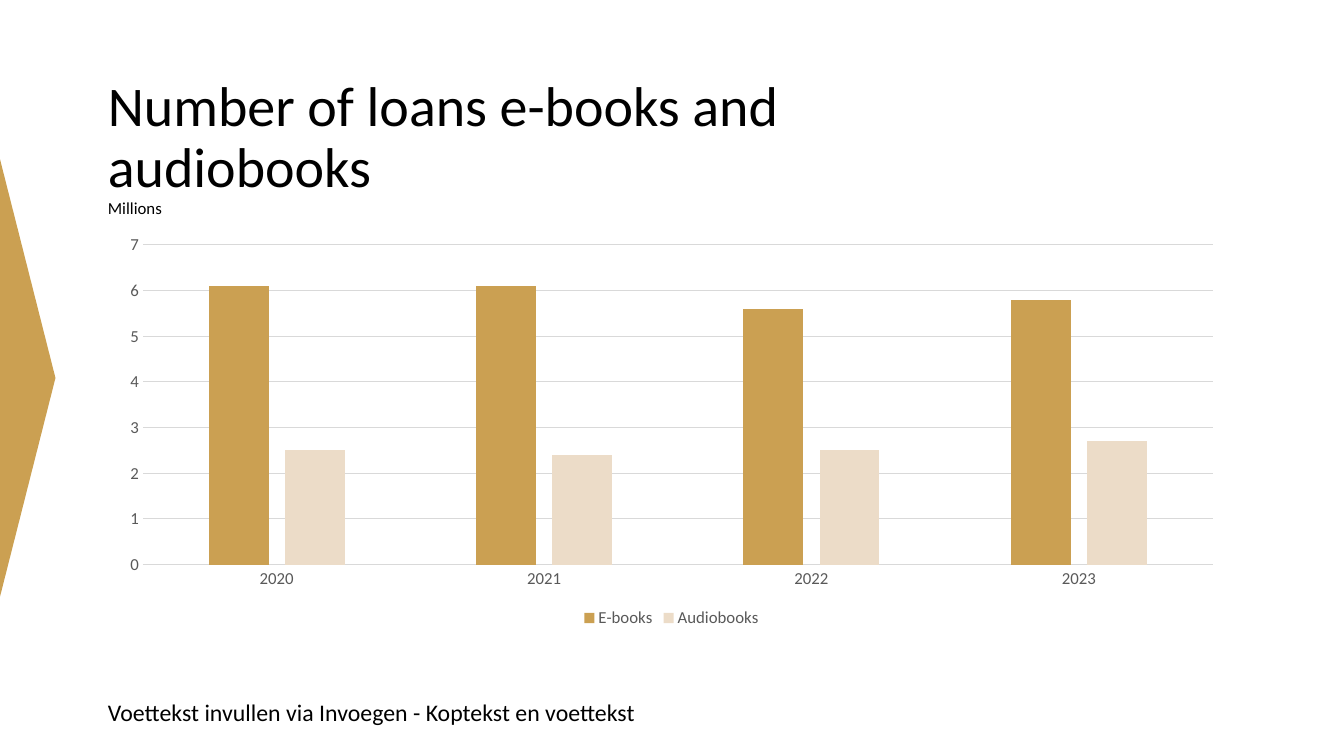
from pptx import Presentation
from pptx import util as u
from pptx.chart.data import CategoryChartData
from pptx.dml.color import RGBColor
from pptx.enum import chart as ch, text

COLOURS = {"gold": "CBA052", "sand": "ECDCC8", "black": "000000",
           "label": "595959", "grid": "D9D9D9"}
LEFT = 1.07
LOANS = {"E-books": ("gold", (6.1, 6.1, 5.6, 5.8)),
         "Audiobooks": ("sand", (2.5, 2.4, 2.5, 2.7))}


class SlideBuilder:
    face = "Calibri"

    def __init__(self, page):
        self.page = page

    def colour(self, name):
        return RGBColor.from_string(COLOURS[name])

    def style_font(self, font, size, colour="black"):
        font.name, font.size, font.bold = self.face, u.Pt(size), False
        font.color.rgb = self.colour(colour)

    def style_line(self, line, colour="grid"):
        line.color.rgb = self.colour(colour)
        line.width = u.Pt(0.75)

    def span(self, para, words, size):
        span = para.add_run()
        span.text = words
        self.style_font(span.font, size)

    def prepare_frame(self, box, anchor):
        frame = box.text_frame
        frame.margin_left = frame.margin_right = 0
        frame.margin_top = frame.margin_bottom = 0
        frame.word_wrap = True
        frame.auto_size = text.MSO_AUTO_SIZE.NONE
        frame.vertical_anchor = anchor
        para = frame.paragraphs[0]
        para.alignment = text.PP_ALIGN.LEFT
        return para

    def title(self, heading, unit, left, top, width, height):
        box = self.page.shapes.title
        box.left, box.top = u.Inches(left), u.Inches(top)
        box.width, box.height = u.Inches(width), u.Inches(height)
        para = self.prepare_frame(box, text.MSO_ANCHOR.TOP)
        para.line_spacing = 0.9
        para.space_before = u.Pt(0)
        self.span(para, heading, 40)
        para.add_line_break()
        self.span(para, unit, 12)

    def footer(self, words, left, top, width, height):
        box = self.page.shapes.add_textbox(*map(u.Inches, (left, top, width, height)))
        self.span(self.prepare_frame(box, text.MSO_ANCHOR.MIDDLE), words, 17)

    def polygon(self, points, colour):
        start, *rest = [(u.Inches(x), u.Inches(y)) for x, y in points]
        outline = self.page.shapes.build_freeform(*start)
        outline.add_line_segments(rest, close=True)
        shape = outline.convert_to_shape()
        shape.shadow.inherit = False
        shape.fill.solid()
        shape.fill.fore_color.rgb = self.colour(colour)
        shape.line.fill.background()

    def column_chart(self, categories, series, left, top, width, height):
        """Draw clustered columns; series maps a name to (colour, values)."""
        data = CategoryChartData()
        data.categories = categories
        for name, (_, values) in series.items():
            data.add_series(name, values)
        chart = self.page.shapes.add_chart(
            ch.XL_CHART_TYPE.COLUMN_CLUSTERED,
            *map(u.Inches, (left, top, width, height)), data).chart
        self.style_font(chart.font, 10)
        chart.has_title = False
        chart.has_legend = True
        chart.legend.position = ch.XL_LEGEND_POSITION.BOTTOM
        chart.legend.include_in_layout = False
        self.style_font(chart.legend.font, 12, "label")

        for axis in (chart.category_axis, chart.value_axis):
            axis.major_tick_mark = axis.minor_tick_mark = ch.XL_TICK_MARK.NONE
            self.style_font(axis.tick_labels.font, 12, "label")
        self.style_line(chart.category_axis.format.line)
        chart.value_axis.format.line.fill.background()
        chart.value_axis.minimum_scale = 0
        chart.value_axis.maximum_scale = 7
        chart.value_axis.major_unit = 1
        self.style_line(chart.value_axis.major_gridlines.format.line)

        plot = chart.plots[0]
        plot.vary_by_categories = False
        plot.gap_width, plot.overlap = 219, -27
        for columns in plot.series:
            columns.format.fill.solid()
            columns.format.fill.fore_color.rgb = self.colour(series[columns.name][0])


def main():
    deck = Presentation()
    deck.slide_width, deck.slide_height = u.Inches(13.33), u.Inches(7.5)
    builder = SlideBuilder(deck.slides.add_slide(deck.slide_layouts[5]))
    builder.polygon([(0, 1.58), (0.55, 3.75), (0, 5.92)], "gold")
    builder.footer("Voettekst invullen via Invoegen - Koptekst en voettekst",
                   LEFT, 6.92, 7.48, 0.29)
    builder.title("Number of loans e-books and audiobooks", "Millions",
                  LEFT, 0.78, 6.97, 1.39)
    builder.column_chart(("2020", "2021", "2022", "2023"), LOANS,
                         LEFT, 2.25, 11.18, 4.02)
    deck.save("out.pptx")


if __name__ == "__main__":
    main()
